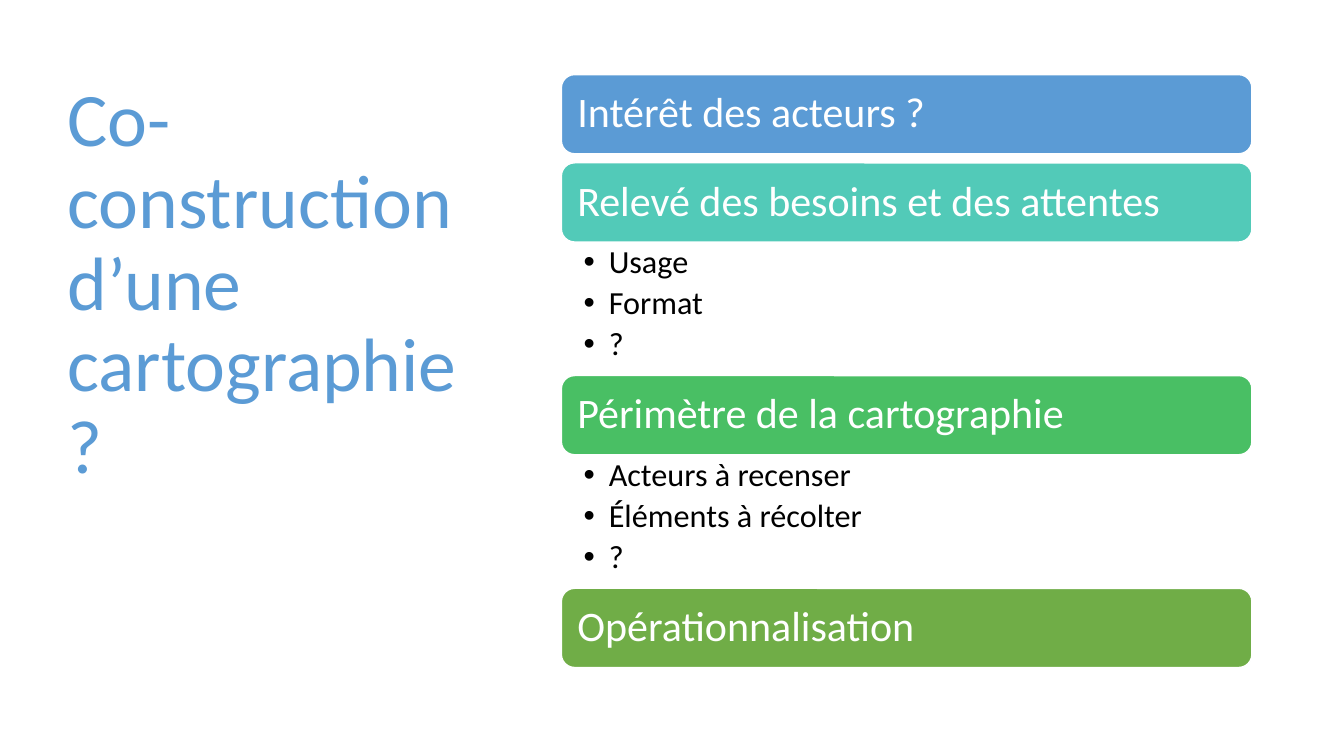
from lxml.etree import SubElement
from pptx import Presentation
from pptx.dml.color import RGBColor
from pptx.enum.shapes import MSO_SHAPE as Shape
from pptx.enum.text import MSO_ANCHOR as Anchor, PP_ALIGN as Align
from pptx.oxml.ns import qn
from pptx.util import Inches, Pt

COLORS = {
    "blue": "5B9BD5",
    "teal": "52CAB8",
    "green": "49BF64",
    "olive": "70AD47",
    "white": "FFFFFF",
    "black": "000000",
}
STEPS = [
    ("Intérêt des acteurs ?", "blue", []),
    ("Relevé des besoins et des attentes", "teal", ["Usage", "Format", "?"]),
    ("Périmètre de la cartographie", "green",
     ["Acteurs à recenser", "Éléments à récolter", "?"]),
    ("Opérationnalisation", "olive", []),
]
STEP_LEFT, STEP_WIDTH = 41.77, 51.38
STEPS_TOP, STEP_HEIGHT, STEP_GAP, DETAILS_HEIGHT = 9.87, 10.47, 1.2, 17.67


class Deck:
    """Draws styled elements on one slide, with lengths in percent of its size."""

    font = "Calibri"

    def __init__(self):
        self.prs = Presentation()
        self.prs.slide_width, self.prs.slide_height = Inches(13.33), Inches(7.5)
        self.slide = self.prs.slides.add_slide(self.prs.slide_layouts[6])

    def place(self, left, top, width, height):
        across, down = self.prs.slide_width / 100, self.prs.slide_height / 100
        return [int(left * across), int(top * down),
                int(width * across), int(height * down)]

    def color(self, name):
        return RGBColor.from_string(COLORS[name])

    def set_text(self, frame, lines, size, color, insets, anchor=Anchor.TOP, after=0):
        frame.word_wrap = True
        frame.vertical_anchor = anchor
        (frame.margin_left, frame.margin_top,
         frame.margin_right, frame.margin_bottom) = map(Inches, insets)
        frame.text = "\n".join(lines)
        for paragraph in frame.paragraphs:
            paragraph.alignment = Align.LEFT
            paragraph.line_spacing = 0.9
            paragraph.space_after = Pt(after)
            paragraph.font.name = self.font
            paragraph.font.size = Pt(size)
            paragraph.font.color.rgb = self.color(color)

    def title(self, text, *box):
        heading = self.slide.shapes.add_textbox(*self.place(*box))
        self.set_text(heading.text_frame, [text], 54, "blue", (0.1, 0.05, 0.1, 0.05))

    def step(self, text, fill, *box):
        bar = self.slide.shapes.add_shape(Shape.ROUNDED_RECTANGLE, *self.place(*box))
        bar.shadow.inherit = False
        bar.fill.solid()
        bar.fill.fore_color.rgb = self.color(fill)
        bar.line.color.rgb = self.color("white")
        bar.line.width = Pt(1)
        self.set_text(bar.text_frame, [text], 30, "white", [0.12] * 4, Anchor.MIDDLE)

    def details(self, lines, *box):
        points = self.slide.shapes.add_textbox(*self.place(*box))
        self.set_text(points.text_frame, lines, 23, "black",
                      (0.22, 0.04, 0.23, 0.04), after=4.5)
        for paragraph in points.text_frame.paragraphs:
            paragraph.level = 1
            props = paragraph._p.get_or_add_pPr()
            props.set("marL", str(Inches(0.25)))
            props.set("indent", str(Inches(-0.25)))
            SubElement(props, qn("a:buFont")).set("typeface", "Arial")
            SubElement(props, qn("a:buChar")).set("char", "•")
            props.append(props.find(qn("a:defRPr")))


def main():
    deck = Deck()
    deck.title("Co-construction d’une cartographie ?", 4.28, 10.13, 34.13, 79)
    top = STEPS_TOP
    for text, fill, lines in STEPS:
        deck.step(text, fill, STEP_LEFT, top, STEP_WIDTH, STEP_HEIGHT)
        top += STEP_HEIGHT
        if lines:
            deck.details(lines, STEP_LEFT, top, STEP_WIDTH, DETAILS_HEIGHT)
        top += DETAILS_HEIGHT if lines else STEP_GAP
    deck.prs.save("out.pptx")


if __name__ == "__main__":
    main()
